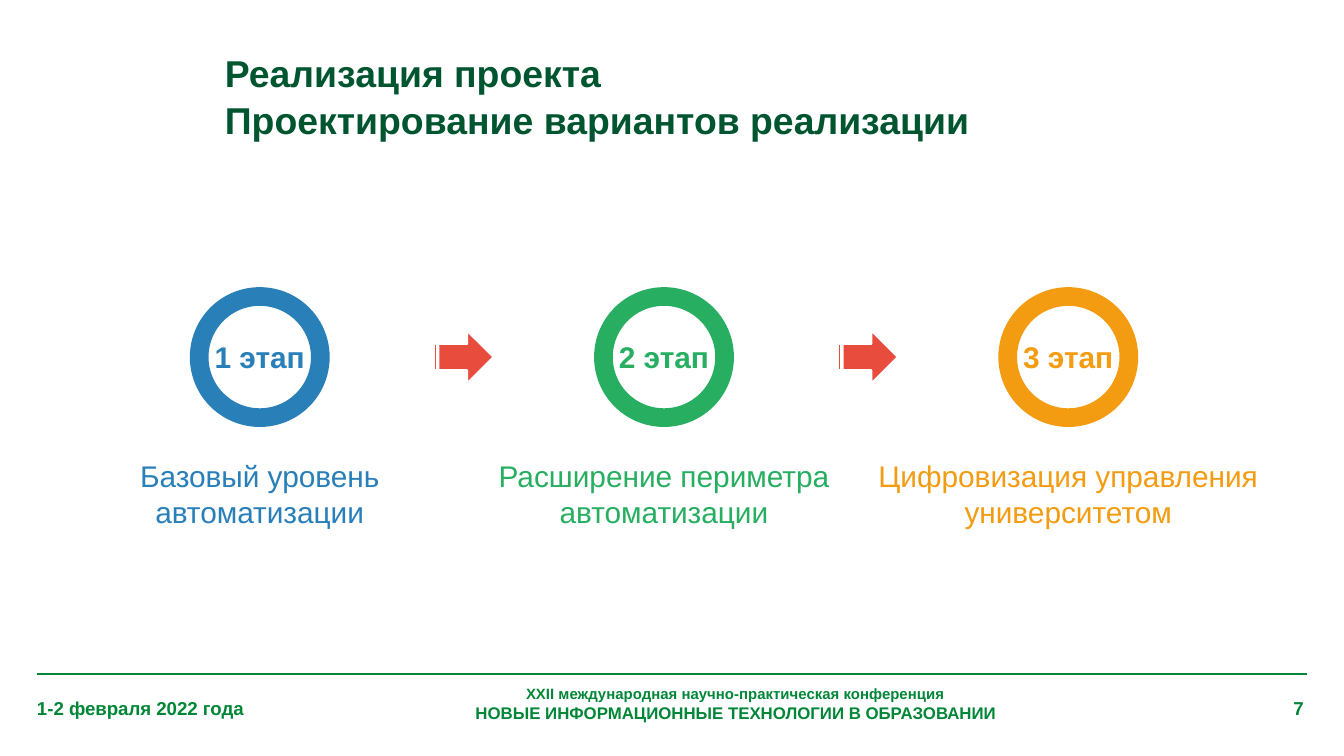
from dataclasses import dataclass

from lxml import etree
from pptx import Presentation
from pptx import util as u
from pptx.dml.color import RGBColor
from pptx.enum import shapes, text
from pptx.oxml.ns import qn


@dataclass(frozen=True)
class Theme:
    font: str = "Arial"
    title: str = "005531"
    footer: str = "008637"
    arrow: str = "E84C3D"
    white: str = "FFFFFF"
    blue: str = "297FB8"
    green: str = "27AE61"
    orange: str = "F39C11"
    title_size: int = 20
    stage_size: int = 16
    footer_size: int = 10
    venue_size: int = 8
    conference_size: int = 9


theme = Theme()
LEFT, CENTER, RIGHT = text.PP_ALIGN.LEFT, text.PP_ALIGN.CENTER, text.PP_ALIGN.RIGHT
TOP, MIDDLE = text.MSO_ANCHOR.TOP, text.MSO_ANCHOR.MIDDLE


def write(shape, lines, size, color, bold=True, align=LEFT, anchor=MIDDLE,
          inset=(0, 0), wrap=True):
    """Fill a shape with one paragraph per line; inset is (sides, top and bottom) in cm."""
    frame = shape.text_frame
    frame.word_wrap = wrap
    frame.vertical_anchor = anchor
    frame.margin_left = frame.margin_right = u.Cm(inset[0])
    frame.margin_top = frame.margin_bottom = u.Cm(inset[1])
    frame.text = "\n".join(lines)
    for paragraph in frame.paragraphs:
        paragraph.alignment = align
        paragraph.font.name = theme.font
        paragraph.font.size = u.Pt(size)
        paragraph.font.bold = bold
        paragraph.font.color.rgb = RGBColor.from_string(color)
    return frame


def add_figure(kind, center_x, center_y, width, height, fill, line, line_width):
    """Add a preset shape around a centre point, lengths in cm."""
    figure = slide.shapes.add_shape(
        kind, u.Cm(center_x - width / 2), u.Cm(center_y - height / 2),
        u.Cm(width), u.Cm(height))
    figure.shadow.inherit = False
    figure.fill.solid()
    figure.fill.fore_color.rgb = RGBColor.from_string(fill)
    figure.line.color.rgb = RGBColor.from_string(line)
    figure.line.width = u.Pt(line_width)
    return figure


prs = Presentation()
prs.slide_width, prs.slide_height = u.Cm(25.4), u.Cm(14.29)
slide = prs.slides.add_slide(prs.slide_layouts[5])

# Title
title = slide.shapes.title
title.left, title.top, title.width, title.height = u.Cm(4.09), u.Cm(0.94), u.Cm(20.02), u.Cm(1.7)
heading = write(title, ["Реализация проекта", "Проектирование вариантов реализации"],
                theme.title_size, theme.title, inset=(0.16, 0))
for paragraph in heading.paragraphs:
    paragraph.line_spacing = 1.05

# Footer rule
rule = slide.shapes.add_connector(shapes.MSO_CONNECTOR.STRAIGHT,
                                  u.Cm(0.7), u.Cm(12.74), u.Cm(24.7), u.Cm(12.74))
rule.line.color.rgb = RGBColor.from_string(theme.footer)
rule.line.width = u.Pt(0.75)
etree.SubElement(rule._element.spPr, qn("a:effectLst"))

# Footer: date, conference, page number
date = slide.shapes.add_textbox(u.Cm(0.7), u.Cm(13.16), u.Cm(4.8), u.Cm(0.43))
write(date, ["1-2 февраля 2022 года"], theme.footer_size, theme.footer)

conference = slide.shapes.add_textbox(u.Cm(4.7), u.Cm(12.95), u.Cm(18.4), u.Cm(0.74))
venue = write(conference, ["XXII международная научно-практическая конференция"],
              theme.venue_size, theme.footer, align=CENTER, anchor=TOP).paragraphs[0]
venue.add_line_break()
conference_name = venue.add_run()
conference_name.text = "НОВЫЕ ИНФОРМАЦИОННЫЕ ТЕХНОЛОГИИ В ОБРАЗОВАНИИ"
conference_name.font.size = u.Pt(theme.conference_size)

page = slide.shapes.add_textbox(u.Cm(22.5), u.Cm(13.18), u.Cm(2.14), u.Cm(0.43))
write(page, ["7"], theme.footer_size, theme.footer, align=RIGHT, anchor=TOP)

# Stages: ring, caption, and an arrow halfway to the next stage
stages = [
    ("Базовый уровень автоматизации", theme.blue, 6.88),
    ("Расширение периметра автоматизации", theme.green, 7.24),
    ("Цифровизация управления университетом", theme.orange, 8.23),
]
first_x, pitch, row_y = 4.91, 7.64, 6.75

for index, (goal, color, width) in enumerate(stages):
    center_x = first_x + index * pitch

    ring = add_figure(shapes.MSO_SHAPE.OVAL, center_x, row_y, 2.29, 2.29,
                      theme.white, color, 10)
    write(ring, [f"{index + 1} этап"], theme.stage_size, color, align=CENTER, wrap=False)

    caption = slide.shapes.add_textbox(u.Cm(center_x - width / 2), u.Cm(8.56),
                                       u.Cm(width), u.Cm(1.47))
    write(caption, [goal], theme.stage_size, color, bold=False, align=CENTER,
          anchor=TOP, inset=(0.18, 0.1))

    if index < len(stages) - 1:
        add_figure(shapes.MSO_SHAPE.STRIPED_RIGHT_ARROW, center_x + pitch / 2, row_y,
                   1.19, 0.99, theme.arrow, theme.white, 1)

prs.save("out.pptx")
